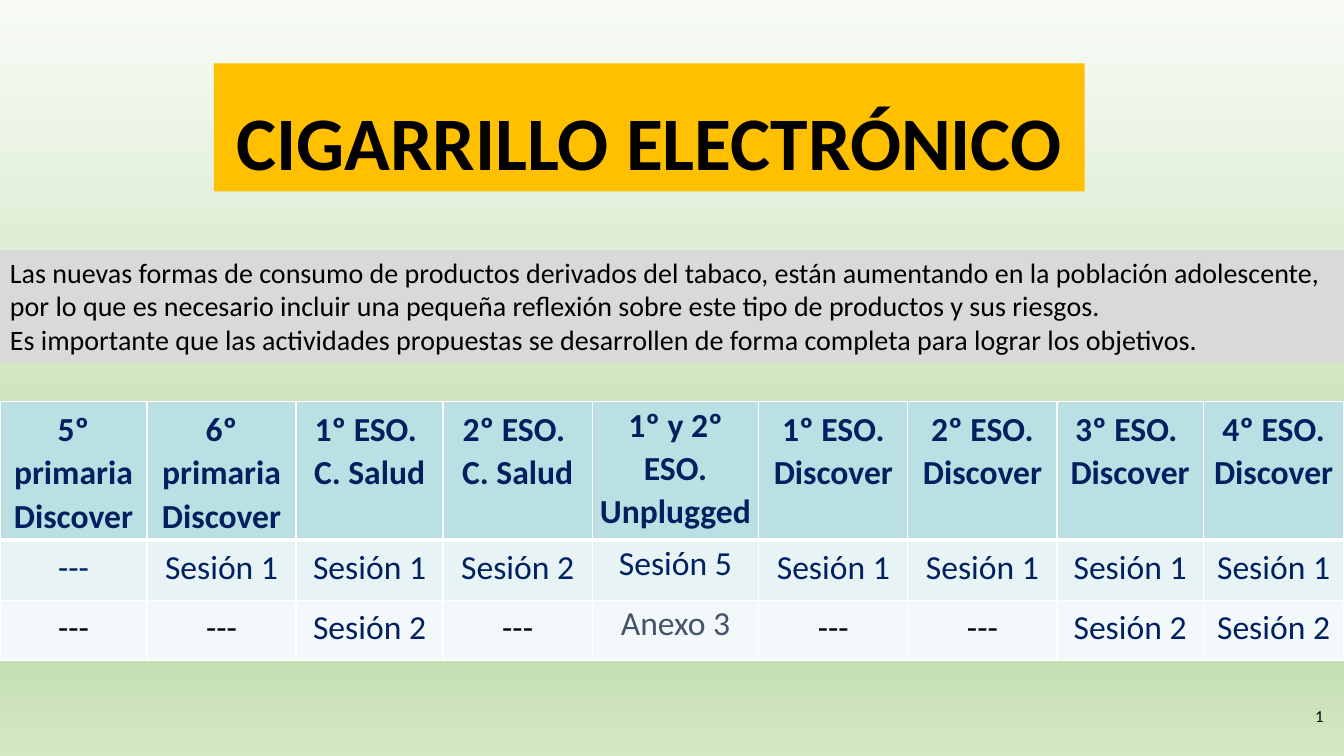
from dataclasses import dataclass

from lxml import etree
from pptx import Presentation
from pptx.dml.color import RGBColor
from pptx.enum.shapes import MSO_SHAPE
from pptx.enum.text import MSO_ANCHOR, PP_ALIGN
from pptx.oxml.ns import qn
from pptx.util import Pt

RECTANGLE = MSO_SHAPE.RECTANGLE
TOP, MIDDLE, BOTTOM = MSO_ANCHOR.TOP, MSO_ANCHOR.MIDDLE, MSO_ANCHOR.BOTTOM
LEFT, CENTER, RIGHT = PP_ALIGN.LEFT, PP_ALIGN.CENTER, PP_ALIGN.RIGHT


@dataclass(frozen=True)
class Theme:
    font: str = "Calibri"
    black: str = "000000"
    navy: str = "002060"
    slate: str = "44546A"
    white: str = "FFFFFF"
    title_fill: str = "FFC000"
    intro_fill: str = "D9D9D9"
    row_fills: tuple = ("BBE0E3", "E7F3F4", "F3F9FA")
    background: tuple = ((0, "F8FBF6"), (74, "BEDCAA"), (83, "BEDCAA"), (100, "D4E8C6"))
    title_size: int = 54
    table_size: int = 24
    intro_size: int = 20
    number_size: int = 12


THEME = Theme()

TITLE = "CIGARRILLO ELECTRÓNICO"
INTRO = [
    "Las nuevas formas de consumo de productos derivados del tabaco, están aumentando "
    "en la población adolescente, por lo que es necesario incluir una pequeña reflexión "
    "sobre este tipo de productos y sus riesgos.",
    "Es importante que las actividades propuestas se desarrollen de forma completa "
    "para lograr los objetivos.",
]

NONE = "---"
COURSES = [
    (["5º primaria", "Discover"], NONE, NONE),
    (["6º primaria", "Discover"], "Sesión 1", NONE),
    (["1º ESO. ", "C. Salud"], "Sesión 1", "Sesión 2"),
    (["2º ESO. ", "C. Salud"], "Sesión 2", NONE),
    (["1º y 2º ESO.", "Unplugged"], "Sesión 5", "Anexo 3"),
    (["1º ESO. Discover"], "Sesión 1", NONE),
    (["2º ESO. Discover"], "Sesión 1", NONE),
    (["3º ESO. ", "Discover"], "Sesión 1", "Sesión 2"),
    (["4º ESO. Discover"], "Sesión 1", "Sesión 2"),
]
COLUMN_WIDTHS = [105, 106.5, 105, 106.5, 119, 106.5, 106.5, 104.5, 100.5]
ROW_HEIGHTS = [97, 43, 43]
NARROW_MARGIN_COLUMN = 4
LAST_ROW_COLORS = {NONE: THEME.black, "Anexo 3": THEME.slate}


def set_fill(fill, color):
    fill.solid()
    fill.fore_color.rgb = RGBColor.from_string(color)


def write_text(frame, lines, size, color=THEME.black, bold=False, align=LEFT, spacing=1.0):
    for index, line in enumerate(lines):
        paragraph = frame.paragraphs[0] if index == 0 else frame.add_paragraph()
        paragraph.alignment = align
        paragraph.line_spacing = spacing
        run = paragraph.add_run()
        run.text = line
        for name, value in {"name": THEME.font, "size": Pt(size), "bold": bold}.items():
            setattr(run.font, name, value)
        run.font.color.rgb = RGBColor.from_string(color)


def paint_background(slide):
    fill = slide.background.fill
    fill.gradient()
    fill.gradient_angle = 270
    stops = slide.element.find(".//" + qn("a:gsLst"))
    for stop in list(stops):
        stops.remove(stop)
    for position, color in THEME.background:
        stop = etree.SubElement(stops, qn("a:gs"), pos=str(position * 1000))
        etree.SubElement(stop, qn("a:srgbClr"), val=color)


def add_panel(slide, box, color, lines, anchor, **text_format):
    shape = slide.shapes.add_shape(RECTANGLE, *map(Pt, box))
    shape.shadow.inherit = False
    shape.line.fill.background()
    set_fill(shape.fill, color)
    shape.text_frame.word_wrap = True
    shape.text_frame.vertical_anchor = anchor
    write_text(shape.text_frame, lines, **text_format)


def add_slide_number(slide, box):
    frame = slide.shapes.add_textbox(*map(Pt, box)).text_frame
    frame.word_wrap = True
    frame.vertical_anchor = MIDDLE
    write_text(frame, ["1"], THEME.number_size, align=RIGHT)


def set_borders(cell, row):
    """White cell edges, with a thicker rule between the header and the body."""
    properties = cell._tc.get_or_add_tcPr()
    widths = {"L": 1, "R": 1, "T": 3 if row == 1 else 1, "B": 3 if row == 0 else 1}
    for position, (side, width) in enumerate(widths.items()):
        line = etree.Element(qn(f"a:ln{side}"), w=str(Pt(width)))
        fill = etree.SubElement(line, qn("a:solidFill"))
        etree.SubElement(fill, qn("a:srgbClr"), val=THEME.white)
        properties.insert(position, line)


def format_cell(cell, row, column, content):
    lines = content if row == 0 else [content]
    color = LAST_ROW_COLORS.get(content, THEME.navy) if row == 2 else THEME.navy
    set_fill(cell.fill, THEME.row_fills[row])
    set_borders(cell, row)
    cell.vertical_anchor = TOP
    if column == NARROW_MARGIN_COLUMN:
        margins = {"left": 0.72, "top": 0.72, "right": 0.72, "bottom": 0}
        for side, margin in margins.items():
            setattr(cell, f"margin_{side}", Pt(margin))
    write_text(cell.text_frame, lines, THEME.table_size, color,
               bold=row == 0, align=CENTER, spacing=1.06)


def add_sessions_table(slide, left, top):
    table = slide.shapes.add_table(
        len(ROW_HEIGHTS), len(COURSES), Pt(left), Pt(top),
        Pt(sum(COLUMN_WIDTHS)), Pt(sum(ROW_HEIGHTS))).table
    for row, height in zip(table.rows, ROW_HEIGHTS):
        row.height = Pt(height)
    for column, width in zip(table.columns, COLUMN_WIDTHS):
        column.width = Pt(width)
    for column, course in enumerate(COURSES):
        for row, content in enumerate(course):
            format_cell(table.cell(row, column), row, column, content)


def main():
    presentation = Presentation()
    presentation.slide_width, presentation.slide_height = Pt(960), Pt(540)
    slide = presentation.slides.add_slide(presentation.slide_layouts[6])
    paint_background(slide)
    add_panel(slide, (152.8, 45.3, 622, 91.4), THEME.title_fill, [TITLE], BOTTOM,
              size=THEME.title_size, bold=True, align=CENTER, spacing=0.9)
    add_slide_number(slide, (895.7, 497, 56.9, 28.8))
    add_panel(slide, (0, 178.6, 960, 79.9), THEME.intro_fill, INTRO, TOP,
              size=THEME.intro_size)
    add_sessions_table(slide, 0, 287)
    presentation.save("out.pptx")


if __name__ == "__main__":
    main()
